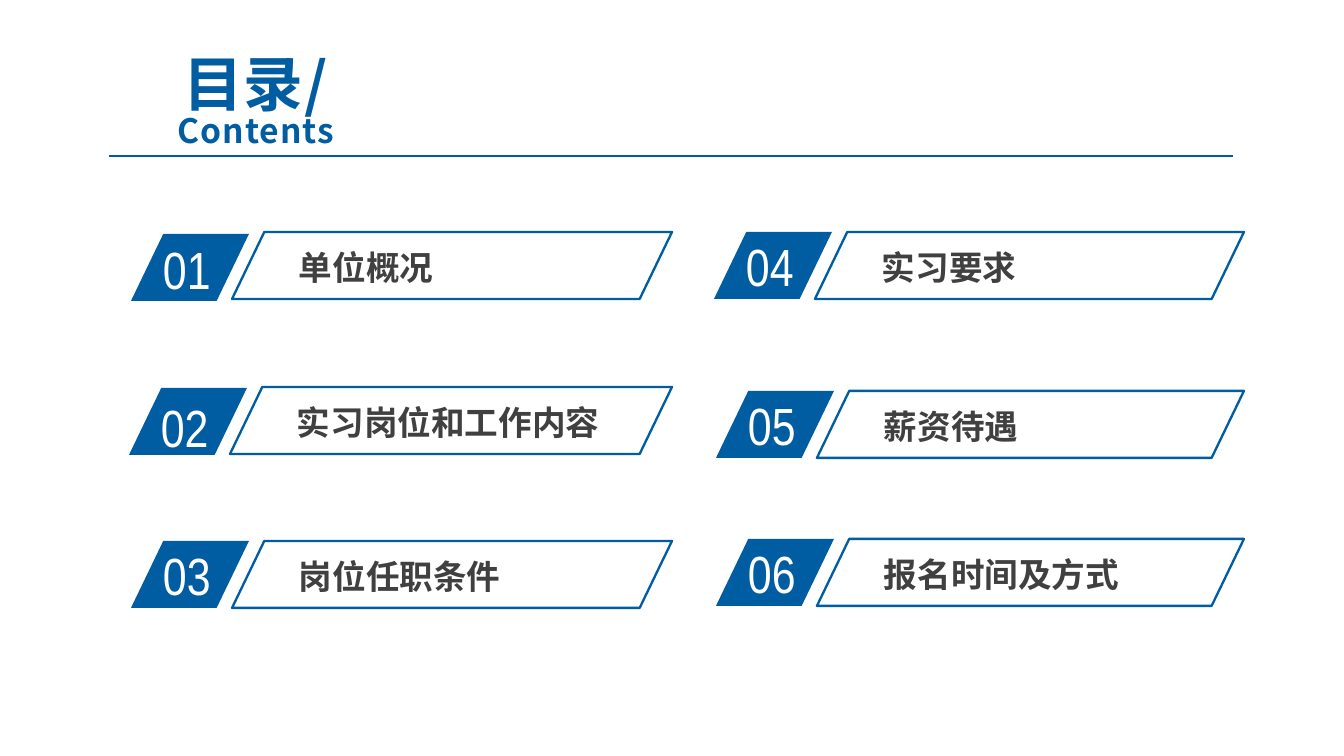
from lxml import etree
from pptx import Presentation
from pptx import util as u
from pptx.dml.color import RGBColor
from pptx.enum import shapes, text
from pptx.oxml import ns

EMU_PER_PX = 914400 / 134.4
BLUE = RGBColor(0x00, 0x5D, 0xA2)
RULE_BLUE = RGBColor(0x00, 0x5B, 0x9E)
GRAY = RGBColor(0x40, 0x40, 0x40)
WHITE = RGBColor(0xFF, 0xFF, 0xFF)

CJK_FONT = "Noto Sans CJK SC"
TITLE = {"name": CJK_FONT, "size": u.Pt(32), "bold": True}
SUBTITLE = {**TITLE, "size": u.Pt(18)}
LABEL = {"name": CJK_FONT, "size": u.Pt(18), "bold": True}
NUMBER = {"name": "Arial Narrow", "size": u.Pt(28), "bold": False}

BAR_HEIGHT = 67
BADGE_WIDTH = 118
FRAME_OFFSET = 101
SLANT = 0.482

# Right edge of the frames, height of the number boxes, then the entries:
# number, label, badge left, badge top, frame top, number top
COLUMNS = [
    (672, 66, [
        ("01", "单位概况", 131, 234, 232, 230),
        ("02", "实习岗位和工作内容", 129, 388, 387, 388),
        ("03", "岗位任职条件", 131, 541, 541, 536),
    ]),
    (1244, 77, [
        ("04", "实习要求", 714, 232, 232, 227),
        ("05", "薪资待遇", 716, 391, 391, 386),
        ("06", "报名时间及方式", 716, 539, 539, 534),
    ]),
]


def px(*lengths):
    return [u.Emu(round(length * EMU_PER_PX)) for length in lengths]


def add_run(paragraph, content, formats, color):
    run = paragraph.add_run()
    run.text = content
    for name, value in formats.items():
        setattr(run.font, name, value)
    run.font.color.rgb = color
    east_asian = etree.SubElement(run._r.get_or_add_rPr(), ns.qn("a:ea"))
    east_asian.set("typeface", formats["name"])
    return run


def format_frame(frame, formats):
    for name, value in formats.items():
        setattr(frame, name, value)


def add_title(slide):
    title = slide.shapes.title
    title.left, title.top, title.width, title.height = px(90, 63, 332, 73)
    inset, top_inset = px(13, 19)
    format_frame(title.text_frame, {
        "word_wrap": True, "auto_size": text.MSO_AUTO_SIZE.NONE,
        "vertical_anchor": text.MSO_ANCHOR.MIDDLE,
        "margin_left": inset, "margin_right": inset,
        "margin_top": top_inset, "margin_bottom": px(7)[0],
    })
    paragraph = title.text_frame.paragraphs[0]
    paragraph.alignment = text.PP_ALIGN.CENTER
    paragraph.line_spacing = 0.8
    paragraph.space_before = u.Pt(0)
    heading = add_run(paragraph, "目录/", TITLE, BLUE)
    paragraph.add_line_break()
    subheading = add_run(paragraph, "Contents", SUBTITLE, BLUE)
    for run in (heading, subheading):
        run._r.get_or_add_rPr().set("spc", "50")


def add_rule(slide, left, right, top):
    rule = slide.shapes.add_connector(
        shapes.MSO_CONNECTOR.STRAIGHT, *px(left, top, right, top))
    rule.line.color.rgb = RULE_BLUE
    rule.line.width = u.Pt(0.75)
    etree.SubElement(rule._element.spPr, ns.qn("a:effectLst"))


def add_bar(slide, left, top, width, filled):
    bar = slide.shapes.add_shape(
        shapes.MSO_SHAPE.PARALLELOGRAM, *px(left, top, width, BAR_HEIGHT))
    bar.adjustments[0] = SLANT
    bar.shadow.inherit = False
    if filled:
        bar.fill.solid()
        bar.fill.fore_color.rgb = BLUE
        bar.line.fill.background()
    else:
        bar.fill.background()
        bar.line.color.rgb = BLUE
        bar.line.width = u.Pt(1.25)


def add_text(slide, box, content, formats, color, insets):
    textbox = slide.shapes.add_textbox(*px(*box))
    side, edge = px(*insets)
    format_frame(textbox.text_frame, {
        "word_wrap": True, "auto_size": text.MSO_AUTO_SIZE.SHAPE_TO_FIT_TEXT,
        "margin_left": side, "margin_right": side,
        "margin_top": edge, "margin_bottom": edge,
    })
    add_run(textbox.text_frame.paragraphs[0], content, formats, color)


def add_entry(slide, entry, right, number_height):
    number, label, left, badge_top, frame_top, number_top = entry
    frame_left = left + FRAME_OFFSET
    # Numbered badge
    add_bar(slide, left, badge_top, BADGE_WIDTH, True)
    add_text(slide, (left + 19, number_top, 113, number_height),
             number, NUMBER, WHITE, (13, 7))
    # Outlined label
    label_left = frame_left + 58
    add_text(slide, (label_left, frame_top + 10, right - 57 - label_left, 51),
             label, LABEL, GRAY, (9, 5))
    add_bar(slide, frame_left, frame_top, right - frame_left, False)


def main():
    presentation = Presentation()
    presentation.slide_width, presentation.slide_height = px(1344, 756)
    slide = presentation.slides.add_slide(presentation.slide_layouts[5])

    # Heading
    add_title(slide)
    add_rule(slide, 109, 1233, 156)

    # Contents entries
    for right, number_height, entries in COLUMNS:
        for entry in entries:
            add_entry(slide, entry, right, number_height)

    presentation.save("out.pptx")


if __name__ == "__main__":
    main()
